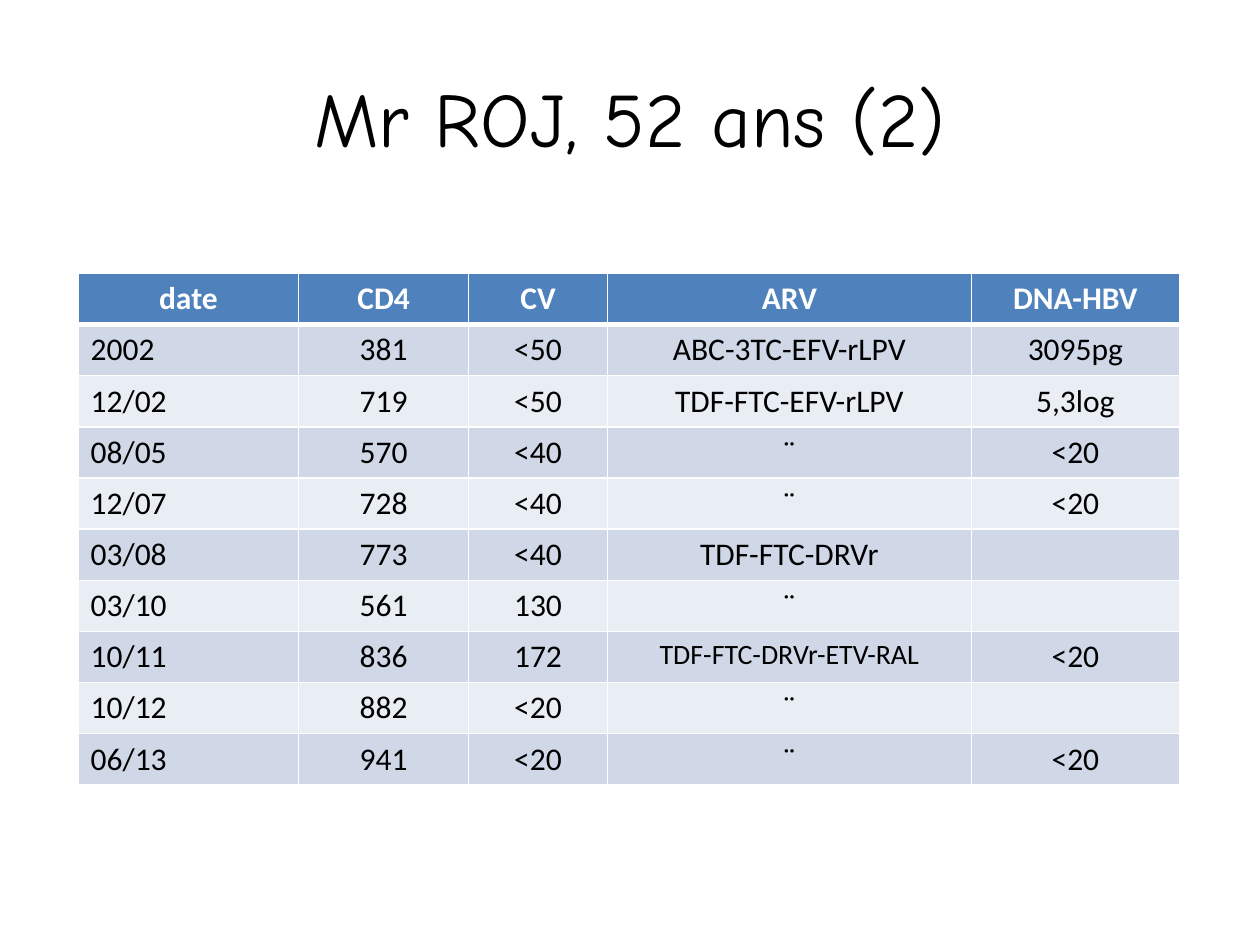
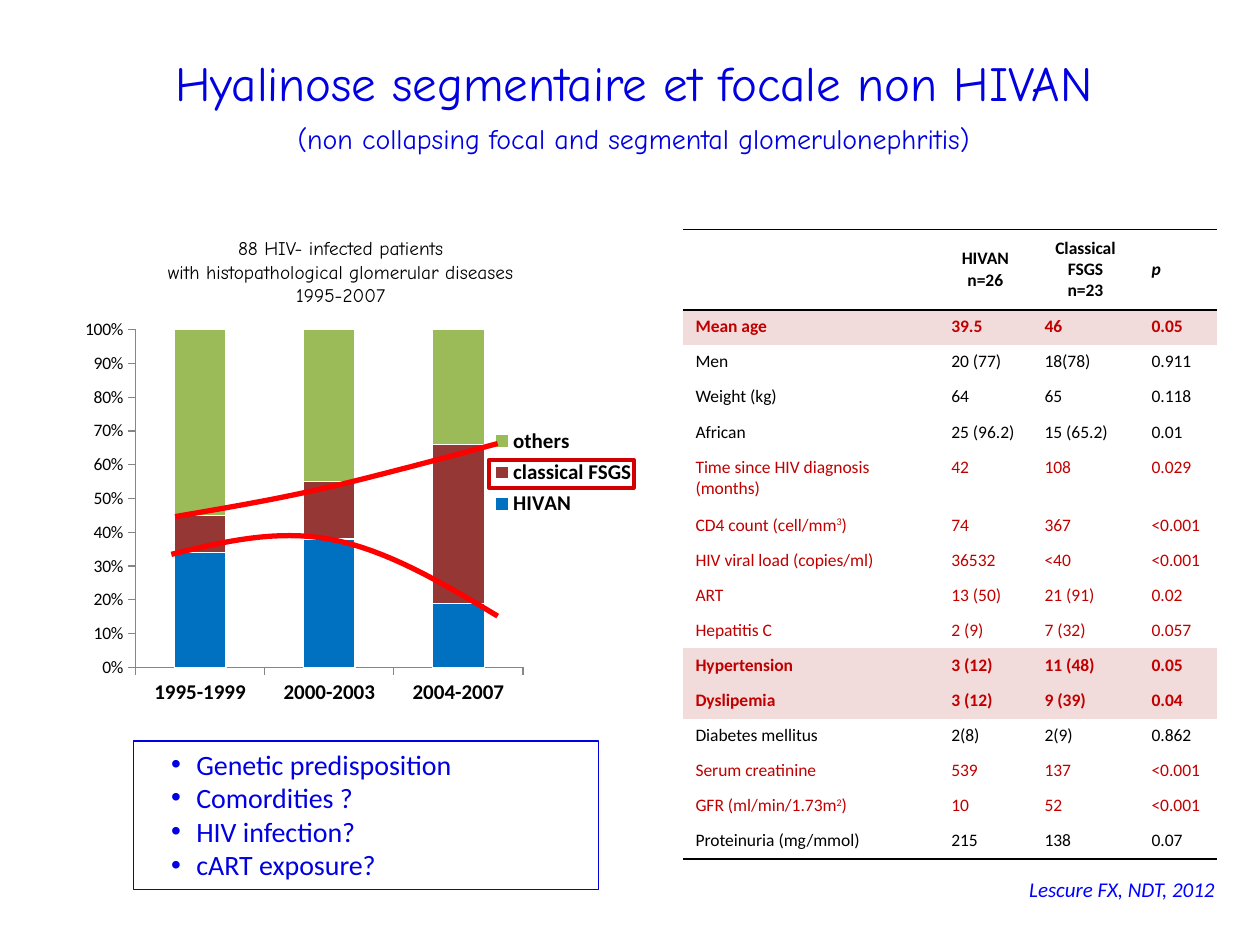
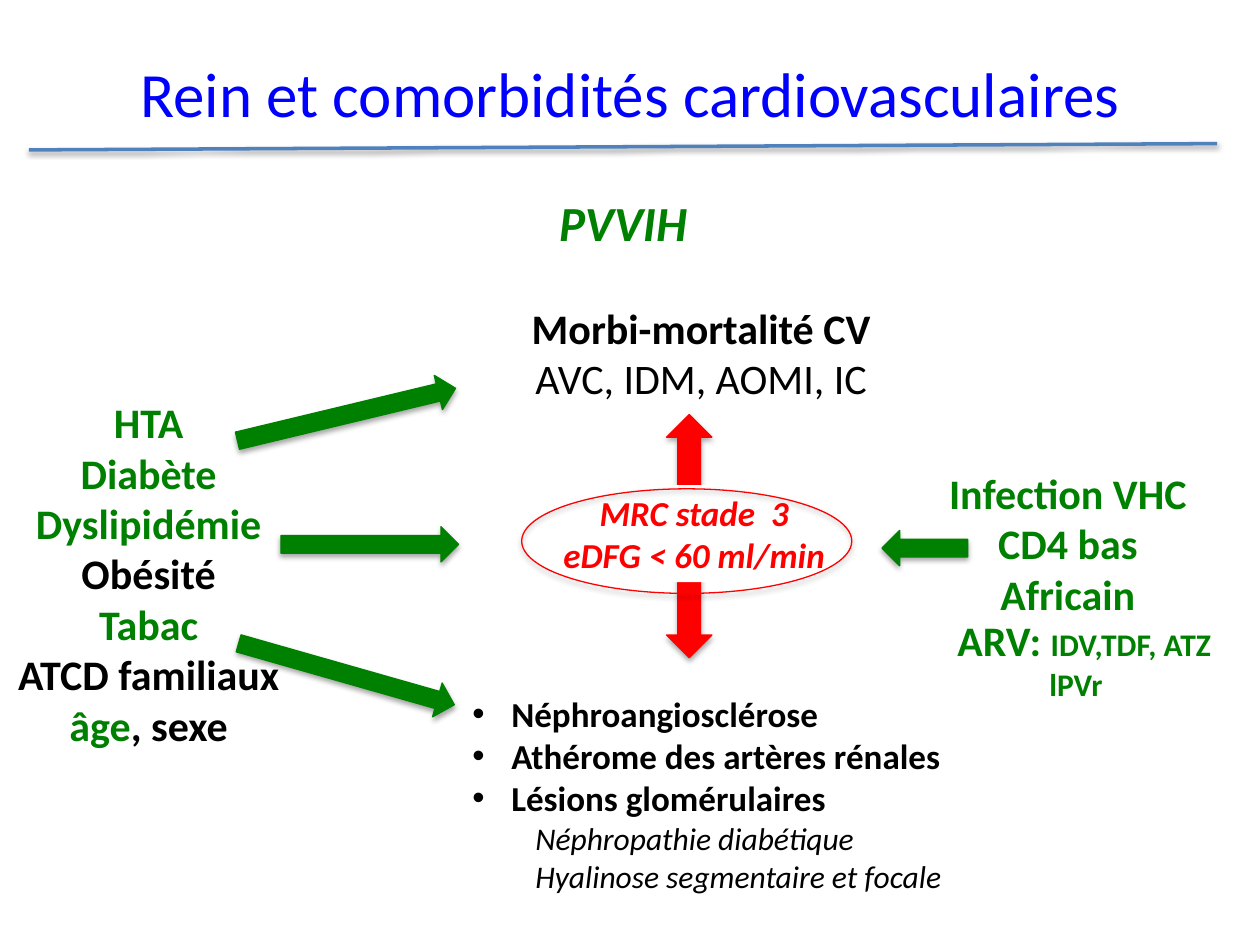
from dataclasses import dataclass, field

from lxml import etree
from pptx import Presentation
from pptx import util as u
from pptx.chart.data import CategoryChartData
from pptx.dml.color import RGBColor
from pptx.enum import chart as charts, shapes, text
from pptx.oxml import parse_xml
from pptx.oxml.ns import nsdecls, qn

PX = 9144  # EMU per px: 100 px to the inch
BODY, HAND = "Calibri", "Comic Neue"
BLACK, WHITE, RED, GREEN = "000000", "FFFFFF", "FF0000", "008000"
BLUE, DEEP_BLUE, STEEL = "0000FF", "0000E0", "4F81BD"
DARK_RED, PINK = "C00000", "F2DCDB"
NO_STYLE = "{2D5ABB26-0587-4C30-8999-92F81FD0307C}"
CENTER, LEFT = text.PP_ALIGN.CENTER, text.PP_ALIGN.LEFT
TITLE_AREA = (50, 30, 900, 125)


@dataclass
class Line:
    """One paragraph: runs are (text, look) pairs, and "\\n" is a line break."""
    runs: list
    look: dict = field(default_factory=dict)
    indent: int = 0
    hanging: int = 0


def line(words, indent=0, hanging=0, **look):
    return Line([(words, {})], look, indent, hanging)


def px(length):
    return u.Emu(round(length * PX))


def rgb(value):
    return RGBColor.from_string(value)


def set_font(font, size=None, color=None, name=None, bold=None, italic=None):
    if size:
        font.size = u.Pt(size)
    if color:
        font.color.rgb = rgb(color)
    if name:
        font.name = name
    if bold is not None:
        font.bold = bold
    if italic is not None:
        font.italic = italic


def set_indent(paragraph, indent, hanging):
    """Indent a paragraph; a hanging part holds a bullet."""
    properties = paragraph._p.get_or_add_pPr()
    properties.set("marL", str(px(indent)))
    properties.set("indent", str(-px(hanging)))
    if hanging:
        etree.SubElement(properties, qn("a:buFont")).set("typeface", "Arial")
        etree.SubElement(properties, qn("a:buChar")).set("char", "•")


def write(frame, lines, align=LEFT, anchor=text.MSO_ANCHOR.TOP, wrap=True, **look):
    frame.word_wrap = wrap
    frame.auto_size = text.MSO_AUTO_SIZE.NONE
    frame.vertical_anchor = anchor
    fill_paragraphs(frame, lines, align, look)


def fill_paragraphs(frame, lines, align, look):
    for index, entry in enumerate(lines):
        if isinstance(entry, str):
            entry = line(entry)
        paragraph = frame.add_paragraph() if index else frame.paragraphs[0]
        paragraph.alignment = align
        if entry.indent:
            set_indent(paragraph, entry.indent, entry.hanging)
        set_font(paragraph.font, **{"name": BODY, **look, **entry.look})
        for words, run_look in entry.runs:
            if words == "\n":
                paragraph.add_line_break()
                continue
            run = paragraph.add_run()
            run.text = words
            if "baseline" in run_look:
                run._r.get_or_add_rPr().set("baseline", run_look["baseline"])
            else:
                set_font(run.font, **run_look)


def new_slide(presentation, title, area=TITLE_AREA, **look):
    slide = presentation.slides.add_slide(presentation.slide_layouts[5])
    shape = slide.shapes.title
    shape.left, shape.top, shape.width, shape.height = map(px, area)
    write(shape.text_frame, [title], CENTER, text.MSO_ANCHOR.MIDDLE, **look)
    return slide


def add_text(slide, area, lines, **look):
    write(slide.shapes.add_textbox(*map(px, area)).text_frame, lines, **look)


def paint(shape, fill=None, outline=None, width=0.75):
    shape.shadow.inherit = False
    if fill:
        shape.fill.solid()
        shape.fill.fore_color.rgb = rgb(fill)
    else:
        shape.fill.background()
    if outline:
        shape.line.color.rgb = rgb(outline)
        shape.line.width = u.Pt(width)
    else:
        shape.line.fill.background()


def add_box(slide, kind, area, fill=None, outline=None, width=0.75, rotation=0):
    shape = slide.shapes.add_shape(kind, *map(px, area))
    shape.rotation = rotation
    paint(shape, fill, outline, width)
    return shape


def drop_shadow(shape, alpha=35, distance=1.8):
    properties = shape._element.spPr
    for effects in properties.findall(qn("a:effectLst")):
        properties.remove(effects)
    properties.append(parse_xml(
        f'<a:effectLst {nsdecls("a")}><a:outerShdw blurRad="{u.Pt(3.1)}" '
        f'dist="{u.Pt(distance)}" dir="5400000" rotWithShape="0">'
        f'<a:srgbClr val="{BLACK}"><a:alpha val="{alpha * 1000}"/></a:srgbClr>'
        '</a:outerShdw></a:effectLst>'))


def add_arrow(slide, area, color, rotation=0, kind=shapes.MSO_SHAPE.RIGHT_ARROW):
    drop_shadow(add_box(slide, kind, area, color, color, rotation=rotation))


def add_curve(slide, start, segments, color, steps=16):
    """Draw cubic segments, each given as two handles and an end point."""
    points = []
    knot = start
    for first, second, end in segments:
        for step in range(1, steps + 1):
            t = step / steps
            weights = ((1 - t) ** 3, 3 * t * (1 - t) ** 2, 3 * t * t * (1 - t), t ** 3)
            handles = zip(knot, first, second, end)
            points.append([px(sum(w * v for w, v in zip(weights, axis)))
                           for axis in handles])
        knot = end
    builder = slide.shapes.build_freeform(*map(px, start))
    builder.add_line_segments(points, close=False)
    paint(builder.convert_to_shape(), outline=color, width=3)


def set_borders(cell, borders):
    """Take {side: (colour, points)} and clear the sides not named."""
    properties = cell._tc.get_or_add_tcPr()
    for side in "LRTB":
        border = etree.SubElement(properties, qn(f"a:ln{side}"))
        if side in borders:
            color, points = borders[side]
            border.set("w", str(u.Pt(points)))
            fill = etree.SubElement(border, qn("a:solidFill"))
            etree.SubElement(fill, qn("a:srgbClr")).set("val", color)
        else:
            border.set("w", "0")
            etree.SubElement(border, qn("a:noFill"))


def add_table(slide, area, columns, row_count, tall_rows):
    """Rows not named in tall_rows share the remaining height."""
    frame = slide.shapes.add_table(row_count, len(columns), *map(px, area))
    table = frame.table
    table.first_row = table.horz_banding = False
    table._tbl.tblPr.find(qn("a:tableStyleId")).text = NO_STYLE
    for column, width in zip(table.columns, columns):
        column.width = px(width)
    shared = (area[3] - sum(tall_rows.values())) / (row_count - len(tall_rows))
    for index, row in enumerate(table.rows):
        row.height = px(tall_rows.get(index, shared))
    return table


def fill_cell(cell, lines, fill, borders, align, **look):
    set_borders(cell, borders)
    if fill:
        cell.fill.solid()
        cell.fill.fore_color.rgb = rgb(fill)
    else:
        cell.fill.background()
    fill_paragraphs(cell.text_frame, lines, align, look)


def add_follow_up_table(slide):
    same = "¨"
    rows = [
        ("date", "CD4", "CV", "ARV", "DNA-HBV"),
        ("2002", "381", "<50", "ABC-3TC-EFV-rLPV", "3095pg"),
        ("12/02", "719", "<50", "TDF-FTC-EFV-rLPV", "5,3log"),
        ("08/05", "570", "<40", same, "<20"),
        ("12/07", "728", "<40", same, "<20"),
        ("03/08", "773", "<40", "TDF-FTC-DRVr", ""),
        ("03/10", "561", "130", same, ""),
        ("10/11", "836", "172", line("TDF-FTC-DRVr-ETV-RAL", size=16), "<20"),
        ("10/12", "882", "<20", same, ""),
        ("06/13", "941", "<20", same, "<20"),
    ]
    table = add_table(slide, (62, 217, 875, 406), (175, 135, 110, 289, 165), len(rows), {})
    thin, thick = (WHITE, 1), (WHITE, 3)
    for r, row in enumerate(rows):
        header = r == 0
        fill = STEEL if header else ("E9EDF4", "D0D8E8")[r % 2]
        borders = {"L": thin, "R": thin, "T": thick if r == 1 else thin,
                   "B": thick if header else thin}
        for c, words in enumerate(row):
            fill_cell(table.cell(r, c), [words] if words else [], fill, borders,
                      CENTER if header or c else LEFT,
                      size=18, color=WHITE if header else BLACK, bold=header)


def raised(before, power):
    return Line([(before, {}), (power, {"baseline": "30000"}), (")", {})])


def add_comparison_table(slide):
    plain, marked, strong = (BLACK, None), (DARK_RED, None), (DARK_RED, PINK)
    rows = [
        (strong, "Mean age", "39.5", "46", "0.05"),
        (plain, "Men", "20 (77)", "18(78)", "0.911"),
        (plain, "Weight (kg)", "64", "65", "0.118"),
        (plain, "African", "25 (96.2)", "15 (65.2)", "0.01"),
        (marked, "Time since HIV diagnosis (months)", "42", "108", "0.029"),
        (marked, raised("CD4 count (cell/mm", "3"), "74", "367", "<0.001"),
        (marked, "HIV viral load (copies/ml)", "36532", "<40", "<0.001"),
        (marked, "ART", "13 (50)", "21 (91)", "0.02"),
        (marked, "Hepatitis C", "2 (9)", "7 (32)", "0.057"),
        (strong, "Hypertension", "3 (12)", "11 (48)", "0.05"),
        (strong, "Dyslipemia", "3 (12)", "9 (39)", "0.04"),
        (plain, "Diabetes mellitus", "2(8)", "2(9)", "0.862"),
        (marked, "Serum creatinine", "539", "137", "<0.001"),
        (marked, raised("GFR (ml/min/1.73m", "2"), "10", "52", "<0.001"),
        (plain, "Proteinuria (mg/mmol)", "215", "138", "0.07"),
    ]
    table = add_table(slide, (542, 182, 423, 500), (203, 74, 85, 62),
                      len(rows) + 1, {0: 64, 5: 46})
    rule = (BLACK, 1)
    headers = ([], ["HIVAN", "n=26"], ["Classical FSGS", "n=23"], [line("p", italic=True)])
    for c, lines in enumerate(headers):
        cell = table.cell(0, c)
        cell.vertical_anchor = text.MSO_ANCHOR.MIDDLE
        fill_cell(cell, lines, None, {"T": rule, "B": rule}, LEFT if c == 3 else CENTER,
                  size=10, color=BLACK, bold=True)
    for r, ((color, fill), *row) in enumerate(rows, 1):
        borders = {"T": rule} if r == 1 else {"B": rule} if r == len(rows) else {}
        for c, words in enumerate(row):
            fill_cell(table.cell(r, c), [words], fill, borders, LEFT,
                      size=10, color=color, bold=fill is not None)


def place(element, x, y, width, height, inner=False):
    """Give a chart part a manual layout, in fractions of the chart."""
    for layout in element.findall(qn("c:layout")):
        element.remove(layout)
    target = '<c:layoutTarget val="inner"/>' if inner else ""
    layout = parse_xml(
        f'<c:layout {nsdecls("c")}><c:manualLayout>{target}'
        '<c:xMode val="edge"/><c:yMode val="edge"/>'
        f'<c:x val="{x}"/><c:y val="{y}"/><c:w val="{width}"/><c:h val="{height}"/>'
        '</c:manualLayout></c:layout>')
    element.insert(0 if inner else 1, layout)


def add_disease_chart(slide):
    series_data = [("HIVAN", (34, 38, 19), "0070C0"),
                   ("classical FSGS", (11, 17, 47), "953735"),
                   ("others", (55, 45, 34), "9BBB59")]
    data = CategoryChartData()
    data.categories = ["1995-1999", "2000-2003", "2004-2007"]
    for name, values, _ in series_data:
        data.add_series(name, values)
    chart = slide.shapes.add_chart(charts.XL_CHART_TYPE.COLUMN_STACKED_100,
                                   *map(px, (58, 249, 496, 319)), data).chart
    set_font(chart.font, 10, BLACK, BODY)
    chart.has_title = False
    plot = chart.plots[0]
    plot.gap_width, plot.overlap, plot.vary_by_categories = 150, 100, False
    for series, (_, _, color) in zip(plot.series, series_data):
        series.format.fill.solid()
        series.format.fill.fore_color.rgb = rgb(color)
        series.format.line.color.rgb = rgb(WHITE)
        series.format.line.width = u.Pt(0.75)
    for axis in (chart.category_axis, chart.value_axis):
        axis.has_major_gridlines = False
        axis.major_tick_mark = charts.XL_TICK_MARK.OUTSIDE
        axis.format.line.color.rgb = rgb("868686")
    labels = chart.value_axis.tick_labels
    labels.number_format, labels.number_format_is_linked = "0%", False
    set_font(labels.font, 10, BLACK, BODY)
    chart.has_legend = True
    chart.legend.position = charts.XL_LEGEND_POSITION.RIGHT
    chart.legend.include_in_layout = False
    for font in (chart.category_axis.tick_labels.font, chart.legend.font):
        set_font(font, 12, BLACK, BODY, bold=True)
    place(chart._chartSpace.chart.plotArea, 0.1, 0.04, 0.62, 0.84, inner=True)
    place(chart.legend._element, 0.66, 0.27, 0.25, 0.25)


def build_patient_slide(presentation):
    slide = new_slide(presentation, "Mr ROJ, 52 ans (2)", size=44, color=BLACK, name=HAND)
    add_follow_up_table(slide)


def build_hyalinosis_slide(presentation):
    title = Line([("Hyalinose segmentaire et focale non HIVAN", {}), ("\n", {}),
                  ("(non collapsing focal and segmental glomerulonephritis)", {"size": 16})])
    slide = new_slide(presentation, title, (53, 13, 900, 125),
                      size=28, color=DEEP_BLUE, name=HAND)
    heading = slide.shapes.title.text_frame.paragraphs[0]
    heading.line_spacing, heading.space_after = 1.3, u.Pt(12)
    add_disease_chart(slide)
    add_curve(slide, (136, 440), [((177, 430), (219, 420), (262, 428)),
                                  ((306, 436), (350, 462), (395, 489))], RED)
    add_curve(slide, (139, 410), [((180, 403), (221, 396), (264, 386)),
                                  ((306, 376), (373, 358), (395, 352))], RED)
    rectangle = shapes.MSO_SHAPE.RECTANGLE
    add_box(slide, rectangle, (388, 365, 115, 22), outline="D20000", width=2.25)
    add_text(slide, (807, 691, 175, 30), ["Lescure FX, NDT, 2012"], wrap=False,
             size=12, color=BLUE, italic=True)
    add_comparison_table(slide)
    causes = add_box(slide, rectangle, (106, 588, 369, 118), outline=DEEP_BLUE)
    questions = ("Genetic predisposition", "Comordities ?", "HIV infection?", "cART exposure?")
    write(causes.text_frame, [line(words, 40, 20) for words in questions],
          size=16, color=DEEP_BLUE)
    add_text(slide, (109, 183, 323, 66),
             ["88 HIV- infected patients", "with histopathological glomerular diseases", "1995-2007"],
             align=CENTER, wrap=False, size=11, color=BLACK, name=HAND)


def build_cardiovascular_slide(presentation):
    slide = new_slide(presentation, "Rein et comorbidités cardiovasculaires",
                      size=36, color=BLUE)
    slide.shapes.title.text_frame.margin_bottom = px(44)
    add_arrow(slide, (529, 329, 36, 193), RED, kind=shapes.MSO_SHAPE.UP_DOWN_ARROW)
    risk_factors = ["HTA", "Diabète", "Dyslipidémie", line("Obésité", color=BLACK), "Tabac",
                    line("ATCD familiaux", color=BLACK),
                    Line([("âge", {}), (", sexe", {"color": BLACK})])]
    add_text(slide, (1, 310, 234, 293), risk_factors, align=CENTER, wrap=False,
             size=24, color=GREEN, bold=True)
    lesions = ("Néphroangiosclérose", "Athérome des artères rénales", "Lésions glomérulaires")
    diseases = ("Néphropathie diabétique", "Hyalinose segmentaire et focale")
    add_text(slide, (365, 545, 404, 172),
             [line(words, 31, 31, size=20, bold=True) for words in lesions]
             + [line(words, 50, size=18, italic=True) for words in diseases],
             wrap=False, color=BLACK)
    add_text(slide, (365, 235, 383, 91),
             [line("Morbi-mortalité CV", bold=True), "AVC, IDM, AOMI, IC"],
             align=CENTER, size=24, color=BLACK)
    kidney = add_box(slide, shapes.MSO_SHAPE.RECTANGLE, (433, 385, 236, 77), WHITE)
    write(kidney.text_frame, ["MRC stade  3", "eDFG < 60 ml/min"], CENTER, wrap=False,
          size=20, color=RED, bold=True, italic=True)
    rule = slide.shapes.add_connector(shapes.MSO_CONNECTOR.STRAIGHT,
                                      *map(px, (23, 119, 966, 114)))
    rule.line.color.rgb = rgb(STEEL)
    rule.line.width = u.Pt(2)
    drop_shadow(rule, 38, 1.6)
    drop_shadow(add_box(slide, shapes.MSO_SHAPE.OVAL, (414, 388, 262, 83), outline=RED))
    add_text(slide, (434, 148, 133, 57), ["PVVIH"], wrap=False,
             size=28, color=GREEN, bold=True, italic=True)
    add_text(slide, (742, 366, 211, 131), ["Infection VHC", "CD4 bas", "Africain"],
             align=CENTER, wrap=False, size=24, color=GREEN, bold=True)
    add_text(slide, (750, 483, 232, 81),
             [Line([("ARV: ", {"size": 24}), ("IDV,TDF, ATZ", {})]), line("lPVr", 73)],
             wrap=False, size=18, color=GREEN, bold=True)
    for area, rotation in (((186, 315, 178, 28), 346.5), ((186, 521, 178, 28), 15.9),
                           ((223, 418, 141, 28), 0), ((700, 421, 68, 28), 180)):
        add_arrow(slide, area, GREEN, rotation)


def main():
    presentation = Presentation()
    presentation.slide_width, presentation.slide_height = px(1000), px(750)
    build_patient_slide(presentation)
    build_hyalinosis_slide(presentation)
    build_cardiovascular_slide(presentation)
    presentation.save("out.pptx")


if __name__ == "__main__":
    main()
